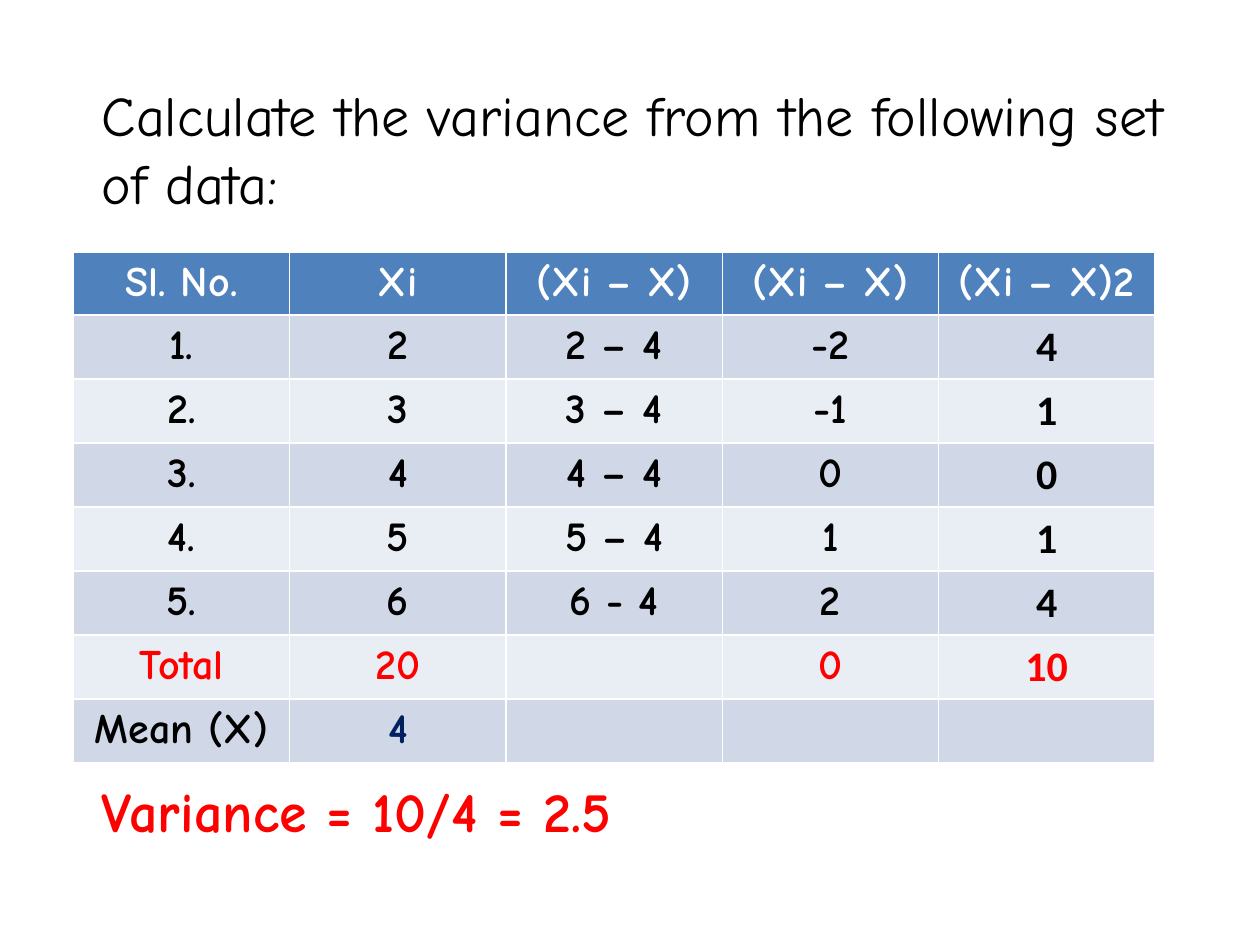
from pptx import Presentation
from pptx import util as u
from pptx.dml.color import RGBColor
from pptx.enum import text

COLORS = {
    "ink": "000000", "red": "FF0000", "navy": "002060", "white": "FFFFFF",
    "header": "4F81BD", "odd": "D0D8E8", "even": "E9EDF4",
}
HAND, PLAIN = "Comic Neue", "Calibri"

HEADINGS = ["Sl. No.", "Xi", "(Xi – X)", "(Xi – X)", "(Xi – X)2"]
OBSERVATIONS = [
    ["1.", "2", "2 – 4", "-2", "4"],
    ["2.", "3", "3 – 4", "-1", "1"],
    ["3.", "4", "4 – 4", "0", "0"],
    ["4.", "5", "5 – 4", "1", "1"],
    ["5.", "6", "6 - 4", "2", "4"],
]
TOTAL = ["Total", "20", "", "0", "10"]
MEAN = ["Mean (X)", "4", "", "", ""]


def rgb(name):
    return RGBColor.from_string(COLORS[name])


def set_font(font, size, name, color, bold):
    font.size, font.name, font.bold = u.Pt(size), name, bold
    font.color.rgb = rgb(color)


def add_statement(slide, left, top, width, height, wording, color, bold):
    """Large line of text above or below the table."""
    frame = slide.shapes.add_textbox(
        u.Cm(left), u.Cm(top), u.Cm(width), u.Cm(height)).text_frame
    frame.word_wrap = True
    statement = frame.paragraphs[0]
    statement.text = wording
    statement.line_spacing = u.Pt(38.9)
    set_font(statement.font, 32, HAND, color, bold)


def fill_cell(cell, wording, fill, name, color):
    cell.fill.solid()
    cell.fill.fore_color.rgb = rgb(fill)
    if wording:
        entry = cell.text_frame.paragraphs[0]
        entry.text = wording
        entry.alignment = text.PP_ALIGN.CENTER
        set_font(entry.font, 24, name, color, True)


def add_variance_table(slide, left, top, width, header_height, row_height):
    rows = [HEADINGS, *OBSERVATIONS, TOTAL, MEAN]
    height = header_height + row_height * (len(rows) - 1)
    table = slide.shapes.add_table(
        len(rows), len(HEADINGS),
        u.Cm(left), u.Cm(top), u.Cm(width), u.Cm(height)).table
    for r, entries in enumerate(rows):
        is_header = r == 0
        table.rows[r].height = u.Cm(header_height if is_header else row_height)
        fill = "header" if is_header else "odd" if r % 2 else "even"
        for c, wording in enumerate(entries):
            color = "white" if is_header else "red" if entries is TOTAL else "ink"
            if entries is MEAN and c == 1:
                color = "navy"
            squares = c == len(HEADINGS) - 1 and not is_header
            fill_cell(table.cell(r, c), wording, fill,
                      PLAIN if squares else HAND, color)


def main():
    prs = Presentation()
    prs.slide_width, prs.slide_height = u.Cm(25.4), u.Cm(19.05)
    slide = prs.slides.add_slide(prs.slide_layouts[6])

    # Task
    add_statement(slide, 1.8, 1.48, 22.33, 3,
                  "Calculate the variance from the following set of data:",
                  "ink", False)
    # Working
    add_variance_table(slide, 1.48, 5.08, 21.8, 1.23, 1.29)
    # Result
    add_statement(slide, 1.8, 15.52, 22.33, 1.63,
                  "Variance = 10/4 = 2.5", "red", True)

    prs.save("out.pptx")


if __name__ == "__main__":
    main()
